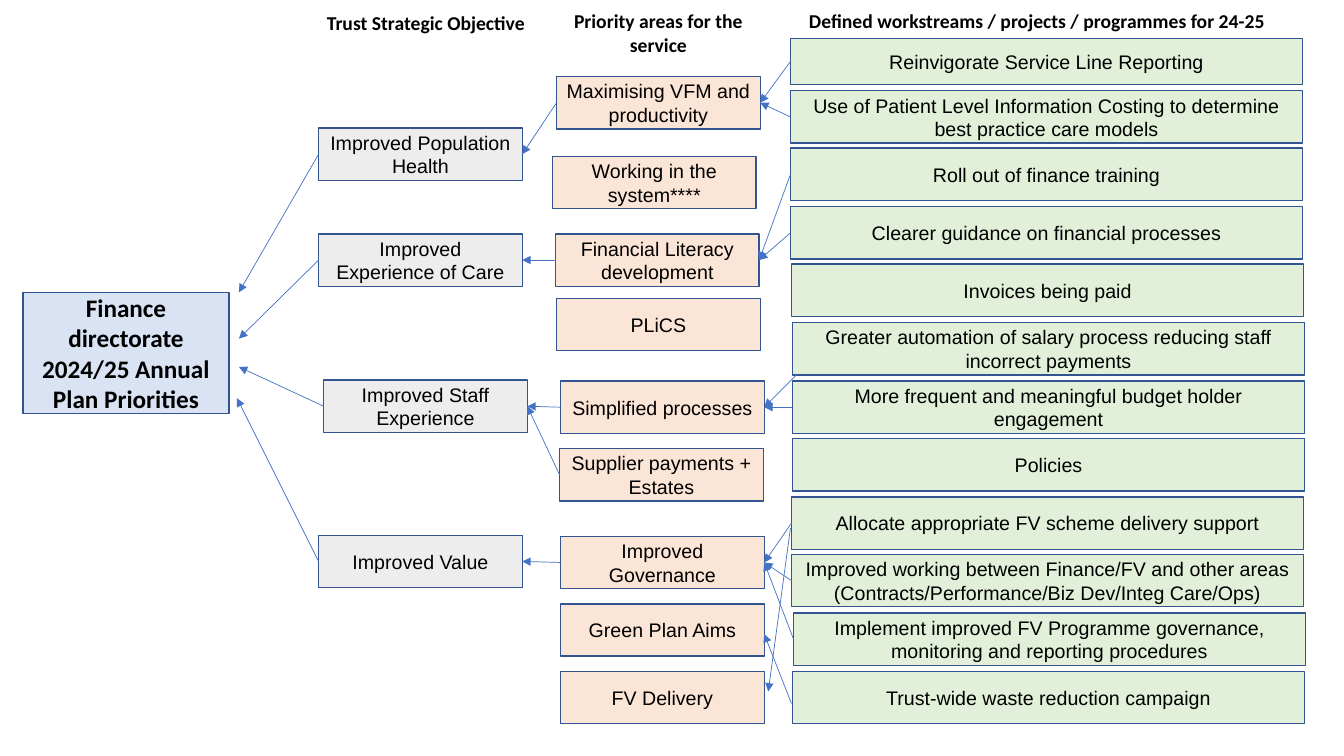
from dataclasses import dataclass

from lxml import etree
from pptx import Presentation
from pptx.dml.color import RGBColor
from pptx.enum.shapes import MSO_CONNECTOR, MSO_SHAPE
from pptx.enum.text import MSO_ANCHOR, MSO_AUTO_SIZE, PP_ALIGN
from pptx.oxml.ns import qn
from pptx.util import Pt

PX = 9144
RECT, STRAIGHT = MSO_SHAPE.RECTANGLE, MSO_CONNECTOR.STRAIGHT
CENTER, TOP, MIDDLE = PP_ALIGN.CENTER, MSO_ANCHOR.TOP, MSO_ANCHOR.MIDDLE
FIXED = MSO_AUTO_SIZE.NONE
LEFT_SITE, RIGHT_SITE = 1, 3


@dataclass(frozen=True)
class Theme:
    """Colours, fonts and type sizes of the slide."""
    ink: str = "000000"
    border: str = "325491"
    arrow: str = "4472C4"
    goal: str = "DAE3F3"
    objective: str = "EDEDED"
    priority: str = "FBE5D6"
    workstream: str = "E2F0D9"
    head_font: str = "Calibri"
    body_font: str = "Arial"
    goal_size: int = 18
    text_size: int = 14
    border_width: float = 1
    arrow_width: float = 0.5


T = Theme()

GOAL = "Finance directorate 2024/25 Annual Plan Priorities"
OBJECTIVES = [
    ("Improved Population Health", 0, 127),
    ("Improved Experience of Care", 0, 232),
    ("Improved Staff Experience", 5, 377),
    ("Improved Value", 0, 531),
]
PRIORITIES = [
    ("Maximising VFM and productivity", 4, 76),
    ("Working in the system****", 0, 155),
    ("Financial Literacy development", 3, 232),
    ("PLiCS", 4, 296),
    ("Simplified processes", 8, 378),
    ("Supplier payments + Estates", 7, 445),
    ("Improved Governance", 8, 532),
    ("Green Plan Aims", 8, 599),
    ("FV Delivery", 8, 666),
]
FIRST_WORKSTREAM = "Reinvigorate Service Line Reporting"
WORKSTREAMS = [
    ("Use of Patient Level Information Costing to determine best practice care models", 0),
    ("Roll out of finance training", 0),
    ("Clearer guidance on financial processes", 0),
    ("Invoices being paid", 1),
    ("Greater automation of salary process reducing staff incorrect payments", 2),
    ("More frequent and meaningful budget holder engagement", 2),
    ("Policies", 2),
    ("Allocate appropriate FV scheme delivery support", 1),
    ("Improved working between Finance/FV and other areas "
     "(Contracts/Performance/Biz Dev/Integ Care/Ops)", 1),
    ("Implement improved FV Programme governance, monitoring and reporting procedures", 3),
    ("Trust-wide waste reduction campaign", 2),
]
PRIORITY_LINKS = [(0, 0), (2, 1), (4, 2), (5, 2), (6, 3)]
WORKSTREAM_LINKS = [(0, 0), (1, 0), (2, 2), (3, 2), (6, 4), (8, 6), (9, 6), (10, 6)]
GOAL_TIPS = [(237, 290), (237, 336), (237, 364), (235, 395)]
FREE_ARROWS = [
    ((791, 371), (758, 404)),
    ((785, 698), (758, 629)),
    ((784, 524), (762, 686)),
]


def rgb(value):
    """Turn a hex string into a colour."""
    return RGBColor.from_string(value)


def write(sp, text, font, size, bold=False, anchor=MIDDLE):
    """Write one centred run of text into a shape."""
    tf = sp.text_frame
    tf.word_wrap = True
    tf.auto_size = FIXED
    tf.vertical_anchor = anchor
    p = tf.paragraphs[0]
    p.alignment = CENTER
    r = p.add_run()
    r.text = text
    r.font.name, r.font.size, r.font.bold = font, Pt(size), bold
    r.font.color.rgb = rgb(T.ink)


def paint(sp, fill):
    """Give a shape its fill and border."""
    sp.fill.solid()
    sp.fill.fore_color.rgb = rgb(fill)
    sp.line.color.rgb = rgb(T.border)
    sp.line.width = Pt(T.border_width)


def add_box(s, text, fill, x, y, w, h):
    """Add one labelled rectangle."""
    sp = s.shapes.add_shape(RECT, x * PX, y * PX, w * PX, h * PX)
    sp.shadow.inherit = False
    paint(sp, fill)
    write(sp, text, T.body_font, T.text_size)
    return sp


def add_heading(s, text, x, y, w, h):
    """Add one column heading."""
    sp = s.shapes.add_textbox(x * PX, y * PX, w * PX, h * PX)
    write(sp, text, T.head_font, T.text_size, True, TOP)


def add_arrow(s, start=(0, 0), tip=(0, 0), source=None, target=None):
    """Add an arrow between points, or glued to the facing sides of boxes."""
    ends = [v * PX for v in (*start, *tip)]
    c = s.shapes.add_connector(STRAIGHT, *ends)
    if source is not None:
        c.begin_connect(source, LEFT_SITE)
    if target is not None:
        c.end_connect(target, RIGHT_SITE)
    c.line.color.rgb = rgb(T.arrow)
    c.line.width = Pt(T.arrow_width)
    etree.SubElement(c.line._get_or_add_ln(), qn("a:tailEnd"), type="triangle")
    etree.SubElement(c._element.spPr, qn("a:effectLst"))


def add_goal(s, x, y, w, h):
    """Place the title as the goal box."""
    sp = s.shapes.title
    sp.left, sp.top, sp.width, sp.height = (v * PX for v in (x, y, w, h))
    paint(sp, T.goal)
    write(sp, GOAL, T.head_font, T.goal_size, True)


def add_column(s, items, fill, x, y, w, h):
    """Add a column of boxes offset from its top left corner."""
    return [add_box(s, text, fill, x + dx, y + dy, w, h) for text, dx, dy in items]


def add_workstreams(s, x, y, w, h):
    """Add the workstream column at an even pitch."""
    first = add_box(s, FIRST_WORKSTREAM, T.workstream, x, y, w, 46)
    rows = [(text, dx, 52 + i * 576 // 10) for i, (text, dx) in enumerate(WORKSTREAMS)]
    return [first] + add_column(s, rows, T.workstream, x, y, w, h)


def add_arrows(s, objectives, priorities, workstreams):
    """Join each column to the one on its left."""
    for objective, tip in zip(objectives, GOAL_TIPS):
        add_arrow(s, tip=tip, source=objective)
    for i, j in PRIORITY_LINKS:
        add_arrow(s, source=priorities[i], target=objectives[j])
    for i, j in WORKSTREAM_LINKS:
        add_arrow(s, source=workstreams[i], target=priorities[j])
    for start, tip in FREE_ARROWS:
        add_arrow(s, start, tip)


def build_driver_diagram(prs):
    """Build the driver diagram slide."""
    s = prs.slides.add_slide(prs.slide_layouts[5])
    add_goal(s, 23, 290, 204, 120)
    add_heading(s, "Trust Strategic Objective", 301, 6, 243, 34)
    add_heading(s, "Priority areas for the service", 552, 4, 202, 57)
    add_heading(s, "Defined workstreams / projects / programmes for 24-25", 779, 4, 499, 34)
    objectives = add_column(s, OBJECTIVES, T.objective, 316, 0, 202, 52)
    priorities = add_column(s, PRIORITIES, T.priority, 548, 0, 202, 52)
    workstreams = add_workstreams(s, 784, 38, 508, 52)
    add_arrows(s, objectives, priorities, workstreams)


def main():
    """Create and save the presentation."""
    prs = Presentation()
    prs.slide_width, prs.slide_height = 1333 * PX, 750 * PX
    build_driver_diagram(prs)
    prs.save("out.pptx")


if __name__ == "__main__":
    main()
